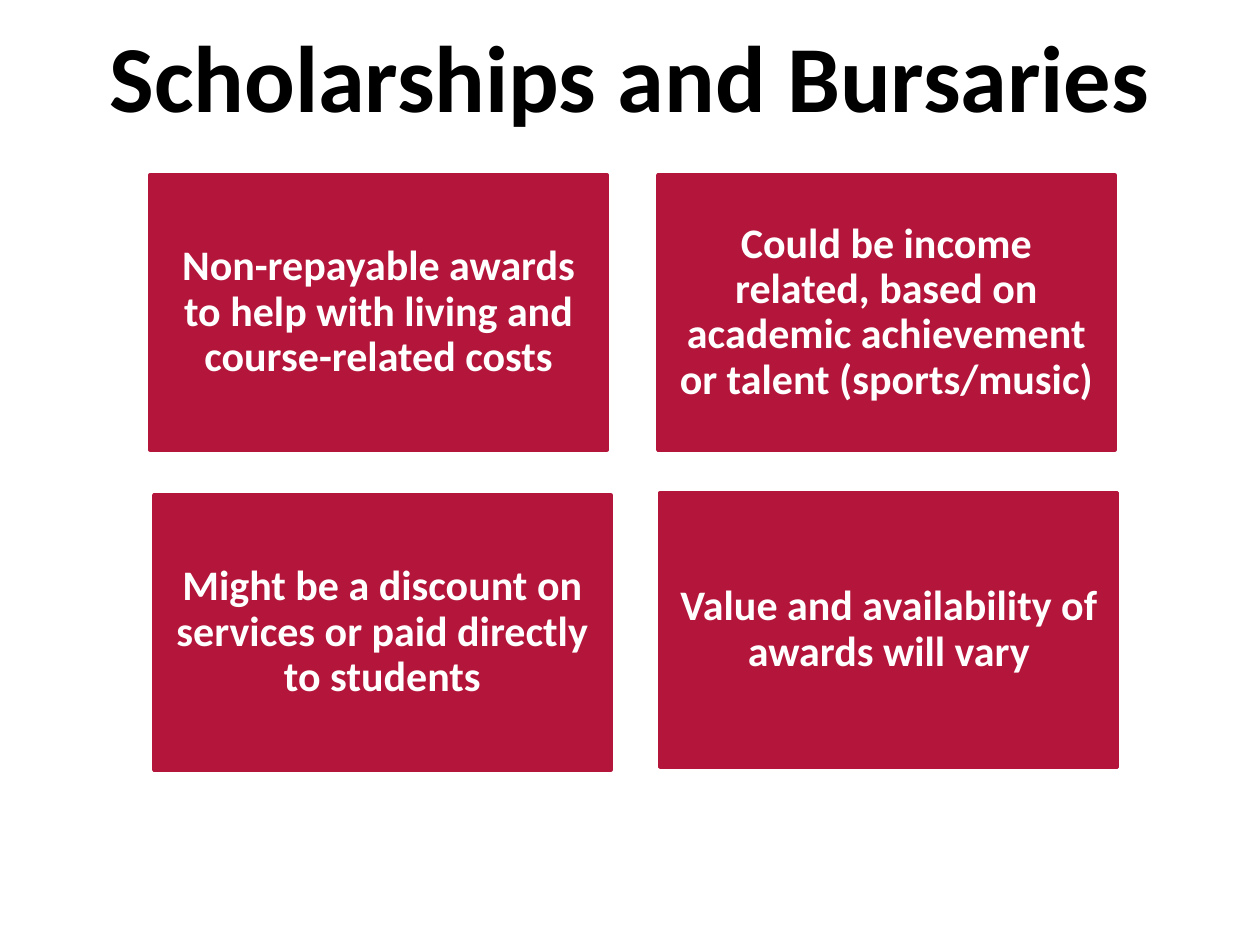
from dataclasses import dataclass

from pptx import Presentation
from pptx.dml.color import RGBColor
from pptx.enum import shapes, text
from pptx.util import Inches, Pt


@dataclass(frozen=True)
class Theme:
    """Hold the colours, font and type sizes of the slide."""
    font: str = "Calibri"
    title_color: RGBColor = RGBColor(0x00, 0x00, 0x00)
    card_color: RGBColor = RGBColor(0xB4, 0x15, 0x3A)
    card_text_color: RGBColor = RGBColor(0xFF, 0xFF, 0xFF)
    title_size: Pt = Pt(54)
    card_size: Pt = Pt(24)
    card_line: Pt = Pt(2)


THEME = Theme()
CARD_WIDTH, CARD_HEIGHT = 3.63, 2.18
CARDS = [
    (1.19, 1.39, "Non-repayable awards to help with living and course-related costs"),
    (5.22, 1.39, "Could be income related, based on academic achievement "
                 "or talent (sports/music)"),
    (1.22, 3.93, "Might be a discount on services or paid directly to students"),
    (5.24, 3.91, "Value and availability of awards will vary"),
]


def write_text(shape, wording, size, color):
    """Write one centred bold paragraph in the middle of a shape."""
    frame = shape.text_frame
    frame.text = wording
    frame.word_wrap = True
    frame.auto_size = text.MSO_AUTO_SIZE.NONE
    frame.vertical_anchor = text.MSO_ANCHOR.MIDDLE
    paragraph = frame.paragraphs[0]
    paragraph.alignment = text.PP_ALIGN.CENTER
    font = paragraph.runs[0].font
    font.name, font.size, font.bold = THEME.font, size, True
    font.color.rgb = color
    return paragraph


def place_title(slide, left, top, width, height):
    """Move the title placeholder to its box and fill it."""
    title = slide.shapes.title
    title.left, title.top = Inches(left), Inches(top)
    title.width, title.height = Inches(width), Inches(height)
    write_text(title, "Scholarships and Bursaries", THEME.title_size, THEME.title_color)


def add_card(slide, left, top, width, height, wording):
    """Add one red card with its statement."""
    card = slide.shapes.add_shape(
        shapes.MSO_SHAPE.RECTANGLE,
        Inches(left), Inches(top), Inches(width), Inches(height))
    card.shadow.inherit = False
    card.fill.solid()
    card.fill.fore_color.rgb = THEME.card_color
    card.line.color.rgb = THEME.card_color
    card.line.width = THEME.card_line
    frame = card.text_frame
    frame.margin_left = frame.margin_right = Inches(0.1)
    frame.margin_top = frame.margin_bottom = Inches(0.1)
    paragraph = write_text(card, wording, THEME.card_size, THEME.card_text_color)
    paragraph.line_spacing = 0.9


def main():
    """Build and save the slide."""
    presentation = Presentation()
    presentation.slide_width, presentation.slide_height = Inches(10), Inches(7.5)
    slide = presentation.slides.add_slide(presentation.slide_layouts[5])
    place_title(slide, 0.75, 0.01, 8.5, 1.17)
    for left, top, wording in CARDS:
        add_card(slide, left, top, CARD_WIDTH, CARD_HEIGHT, wording)
    presentation.save("out.pptx")


if __name__ == "__main__":
    main()
